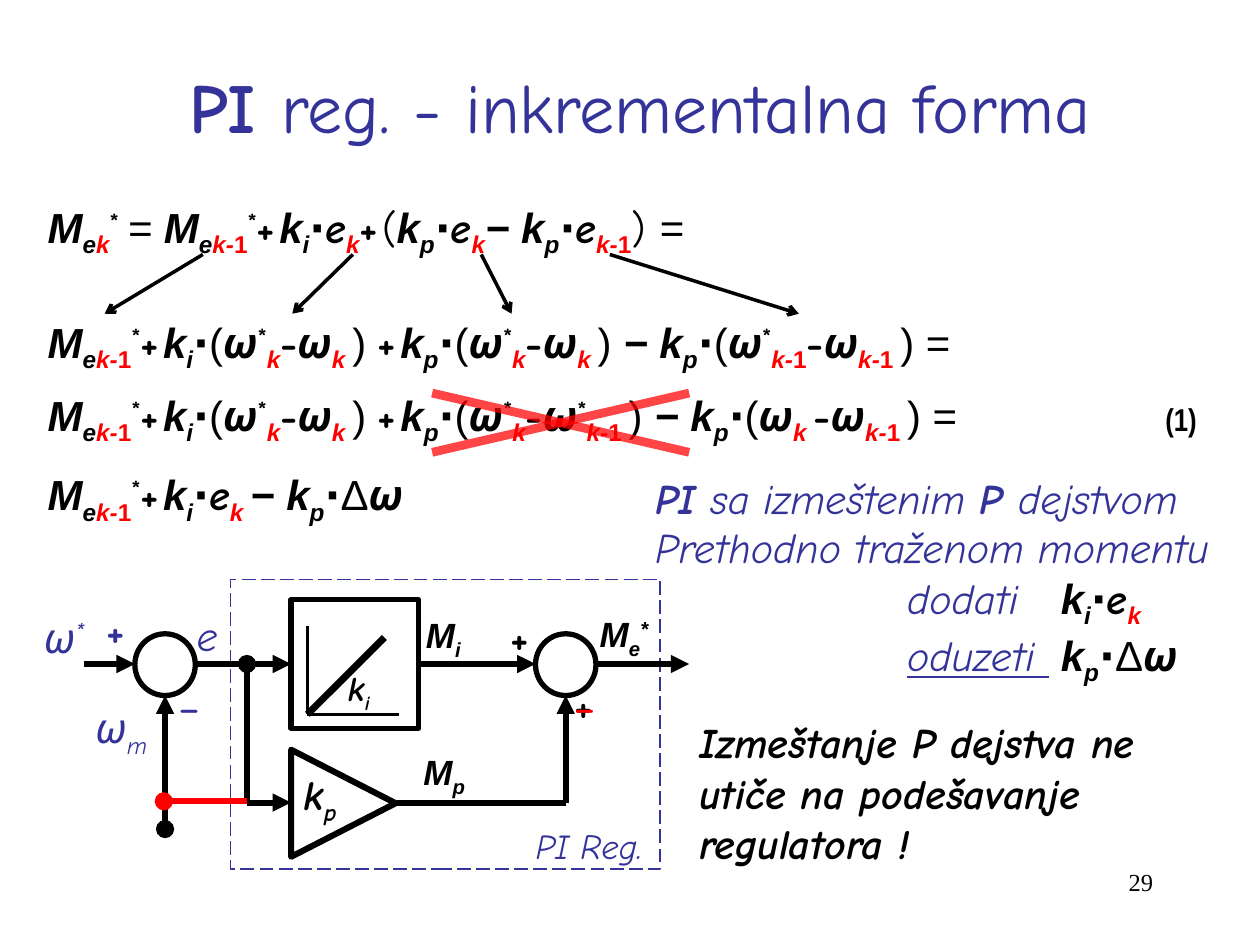
"""Build a slide on the incremental form of a PI regulator."""
from lxml import etree
from pptx import Presentation
from pptx.dml.color import RGBColor
from pptx.enum.dml import MSO_LINE
from pptx.enum.shapes import MSO_CONNECTOR, MSO_SHAPE
from pptx.enum.text import MSO_ANCHOR, MSO_AUTO_SIZE, PP_ALIGN
from pptx.oxml.ns import qn
from pptx.util import Inches, Pt

BLACK = RGBColor(0, 0, 0)
BLUE = RGBColor(0x33, 0x33, 0x99)
RED = RGBColor(0xFF, 0, 0)
WHITE = RGBColor(0xFF, 0xFF, 0xFF)
RECT, OVAL, TRI = MSO_SHAPE.RECTANGLE, MSO_SHAPE.OVAL, MSO_SHAPE.ISOSCELES_TRIANGLE
LEFT, MID, RIGHT = PP_ALIGN.LEFT, PP_ALIGN.CENTER, PP_ALIGN.RIGHT
TOP, CENTER = MSO_ANCHOR.TOP, MSO_ANCHOR.MIDDLE
STRAIGHT, GROW = MSO_CONNECTOR.STRAIGHT, MSO_AUTO_SIZE.SHAPE_TO_FIT_TEXT
DASH = MSO_LINE.LONG_DASH
ARIAL, COMIC = "Arial", "Comic Neue"

# Key: font, bold, italic, colour, baseline
STYLES = {
    "v": (ARIAL, True, True, BLACK, 0),
    "s": (ARIAL, True, True, BLACK, -25),
    "r": (ARIAL, True, True, RED, -25),
    "n": (ARIAL, True, False, RED, -25),
    "a": (ARIAL, False, False, BLACK, 0),
    "w": (ARIAL, False, True, BLACK, 0),
    "x": (ARIAL, True, True, BLACK, 30),
    "*": (COMIC, True, False, BLACK, 30),
    "+": (COMIC, True, False, BLACK, 0),
    "g": (COMIC, True, True, BLACK, 30),
    "o": (COMIC, True, True, BLACK, 0),
    "d": (COMIC, True, True, BLACK, -25),
    "c": (COMIC, False, False, BLACK, 0),
    "b": (COMIC, False, True, BLUE, 0),
    "t": (COMIC, False, True, BLUE, -25),
    "h": (COMIC, False, True, BLUE, 30),
    "u": (COMIC, False, True, BLUE, 0),
    "B": (COMIC, True, True, BLUE, 0),
    "P": (COMIC, True, False, BLUE, 0),
    "T": (COMIC, False, False, BLUE, 0),
    "R": (COMIC, True, False, RED, 0),
    "l": ("Times New Roman", False, False, BLACK, 0),
    "q": ("Arial Narrow", True, False, BLACK, 0),
}
SIZES = {"g": 11, "q": 18}

LAST = "vM|se|rk-|n1|**|++|g |"
KI, KP = "vk|si|v⋅|", "vk|sp|v⋅|"
PLUS, MINUS = "++|g |", "v− "
ERR = "a(|oω|**|rk|+-|oω|rk |a) |"
OLD = "a(|oω|**|rk-|n1|+-|oω|rk-|n1 |a) ="
REF = "a(|oω|**|rk|+-|oω|**|rk-|n1 |a) |"
SPEED = "a(|oω|rk |+-|oω|rk-|n1 |a) =|"
DELTA = "aΔ|oω"

# Place, size, inset, paragraphs
TEXTS = [
    ((0.28, 1.55, 5.88, 0.5), 24, 0.1, [
        "vM|se|rk|** |w= |" + LAST + KI + "oe|rk|" + PLUS + "c(|" + KP
        + "oe|rk|" + MINUS + "|" + KP + "oe|rk-|n1|c) |a="]),
    ((0.28, 2.46, 8.66, 0.5), 24, 0.1, [
        LAST + KI + ERR + PLUS + KP + ERR + MINUS + "|" + KP + OLD]),
    ((0.28, 3.04, 9.72, 0.5), 24, 0.1, [
        LAST + KI + ERR + PLUS + KP + REF + MINUS + "|" + KP + SPEED + "a\t|q(1)"]),
    ((0.28, 3.67, 3.23, 0.5), 24, 0.1, [
        LAST + KI + "oe|rk |" + MINUS + "|" + KP + DELTA]),
    ((5.2, 3.75, 4.8, 0.4), 24, 0, ["BPI |bsa izmeštenim|B P |bdejstvom"]),
    ((5.2, 4.14, 4.8, 1.21), 24, 0, [
        "bPrethodno traženom momentu",
        "b\tdodati\t|" + KI + "oe|rk",
        "b\t|uoduzeti |b\t|" + KP + DELTA]),
    ((5.55, 5.69, 4.02, 1.21), 24, 0, [
        "oIzmeštanje P dejstva ne utiče na podešavanje regulatora !"]),
    ((0.75, 4.75, 0.32, 0.52), 24, 0.1, ["P+"]),
    ((3.95, 4.8, 0.32, 0.52), 24, 0.1, ["++"]),
    ((4.46, 5.34, 0.32, 0.52), 24, 0.1, ["++"]),
    ((1.34, 5.35, 0.32, 0.42), 18, 0.1, ["P_"]),
    ((4.48, 5.35, 0.32, 0.42), 18, 0.1, ["R_"]),
    ((0.35, 4.85, 0.48, 0.42), 24, 0, ["bω|h*"]),
    ((0.76, 5.57, 0.48, 0.42), 24, 0, ["bω|tm"]),
    ((1.56, 4.84, 0.25, 0.42), 24, 0, ["be"]),
    ((2.31, 6.05, 0.51, 0.52), 24, 0.1, ["ok|dp"]),
    ((2.76, 5.29, 0.41, 0.35), 20, 0, ["ok|di"]),
    ((3.38, 4.87, 0.48, 0.35), 20, 0, ["vM|si"]),
    ((3.36, 5.96, 0.48, 0.35), 20, 0, ["vM|sp"]),
    ((4.76, 4.86, 0.48, 0.35), 20, 0, ["vM|se|x*"]),
    ((4.25, 6.54, 0.99, 0.35), 20, 0, ["bPI Reg."]),
]
TABS = {2: [8.87], 5: [2, 3.22]}

SHAPES = {
    "gain": (TRI, (2.3, 5.96, 0.85, 0.83), 3.5, BLACK),
    "diff": (OVAL, (1.07, 5.03, 0.48, 0.49), 3, BLACK),
    "sum": (OVAL, (4.25, 5.03, 0.48, 0.49), 3, BLACK),
    "ramp": (RECT, (2.31, 4.76, 1.01, 1.02), 3, BLACK),
    "frame": (RECT, (1.83, 4.6, 3.41, 2.3), 1, BLUE),
}

# From, to, width, head, tail
WIRES = [
    ((1.96, 6.37), (1.96, 5.27), 3.5, None, "oval"),
    ((3.15, 6.37), (4.49, 6.37), 3.5, None, None),
    ((1.31, 6.58), (1.31, 5.52), 3.5, "oval", "triangle"),
    ((1.55, 5.27), (2.31, 5.27), 3.5, None, "triangle"),
    ((0.67, 5.27), (1.07, 5.27), 3.5, None, "triangle"),
    ((2.44, 4.97), (2.44, 5.67), 2, None, None),
    ((2.44, 5.67), (3.17, 5.67), 2, None, None),
    ((2.44, 5.67), (3.05, 5.06), 4, None, None),
    ((1.96, 6.37), (2.31, 6.37), 3.5, None, "triangle"),
    ((4.49, 6.37), (4.49, 5.52), 3.5, None, "triangle"),
    ((4.73, 5.27), (5.47, 5.27), 3.5, None, "triangle"),
    ((3.32, 5.27), (4.25, 5.27), 3.5, None, "triangle"),
]
INTO, OUT = WIRES[3], WIRES[11]
ARROWS = [(1.61, 0.83), (2.8, 2.32), (3.82, 4.06), (4.84, 6.34)]
CROSS = [(5.47, 3.43), (3.43, 5.47)]


def write(slide, place, size, inset, lines, tabs=(), align=LEFT, anchor=TOP, grow=True):
    frame = slide.shapes.add_textbox(*map(Inches, place)).text_frame
    frame.word_wrap = True
    frame.vertical_anchor = anchor
    frame.margin_left = frame.margin_right = Inches(inset)
    frame.margin_top = frame.margin_bottom = Inches(inset / 2)
    if grow:
        frame.auto_size = GROW
    for i, line in enumerate(lines):
        para = frame.add_paragraph() if i else frame.paragraphs[0]
        para.alignment = align
        if tabs:
            stops = etree.SubElement(para._p.get_or_add_pPr(), qn("a:tabLst"))
            for stop in tabs:
                etree.SubElement(stops, qn("a:tab"), pos=str(Inches(stop)), algn="l")
        for part in line.split("|"):
            key, run = part[0], para.add_run()
            run.text = part[1:]
            font = run.font
            font.name, font.bold, font.italic, font.color.rgb, base = STYLES[key]
            font.size = Pt(SIZES.get(key, size))
            if key == "u":
                font.underline = True
            if base:
                run._r.get_or_add_rPr().set("baseline", str(base * 1000))


def draw(slide, kind, place, width, color):
    shape = slide.shapes.add_shape(kind, *map(Inches, place))
    shape.shadow.inherit = False
    shape.fill.background()
    shape.line.color.rgb = color
    shape.line.width = Pt(width)
    return shape


def link(slide, start, end, width, head=None, tail=None, color=BLACK, alpha=None):
    wire = slide.shapes.add_connector(STRAIGHT, *map(Inches, start + end))
    wire.line.color.rgb = color
    wire.line.width = Pt(width)
    edge = wire.line._get_or_add_ln()
    if alpha:
        tone = edge.find(".//" + qn("a:srgbClr"))
        etree.SubElement(tone, qn("a:alpha"), val=str(alpha * 1000))
    for tag, tip in (("a:headEnd", head), ("a:tailEnd", tail)):
        if tip:
            etree.SubElement(edge, qn(tag), type=tip)
    etree.SubElement(wire._element.spPr, qn("a:effectLst"))
    return wire


def main():
    deck = Presentation()
    deck.slide_width, deck.slide_height = Inches(10), Inches(7.5)
    slide = deck.slides.add_slide(deck.slide_layouts[6])
    write(slide, (0.59, 0.21, 8.98, 1.25), 40, 0.1,
          ["PPI |Treg. - inkrementalna forma"], align=MID, anchor=CENTER, grow=False)
    write(slide, (7.17, 6.83, 2.08, 0.5), 14, 0.1, ["l29"], align=RIGHT, grow=False)
    made = {name: draw(slide, *spec) for name, spec in SHAPES.items()}
    made["gain"].rotation = 90
    made["gain"].fill.solid()
    made["gain"].fill.fore_color.rgb = WHITE
    made["frame"].line.dash_style = DASH
    for row in WIRES:
        wire = link(slide, *row)
        if row is INTO:
            wire.end_connect(made["ramp"], 1)
        elif row is OUT:
            wire.begin_connect(made["ramp"], 3)
    link(slide, (1.96, 6.36), (1.3, 6.36), 3.5, tail="oval", color=RED)
    for i, row in enumerate(TEXTS):
        write(slide, *row, tabs=TABS.get(i, ()))
    for x, end in ARROWS:
        link(slide, (x, 2.02), (end, 2.49), 2, tail="arrow")
    for x, end in CROSS:
        link(slide, (x, 3.12), (end, 3.59), 5, color=RED, alpha=72)
    deck.save("out.pptx")


if __name__ == "__main__":
    main()
